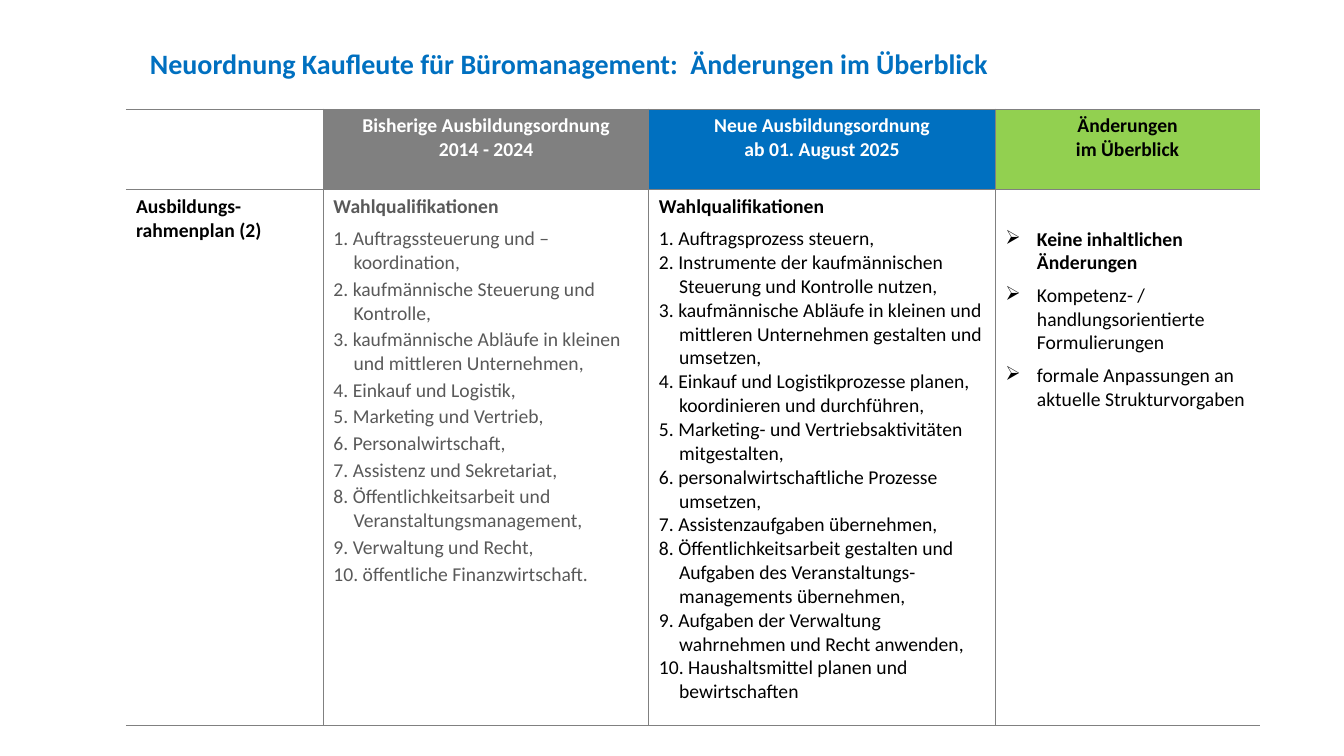
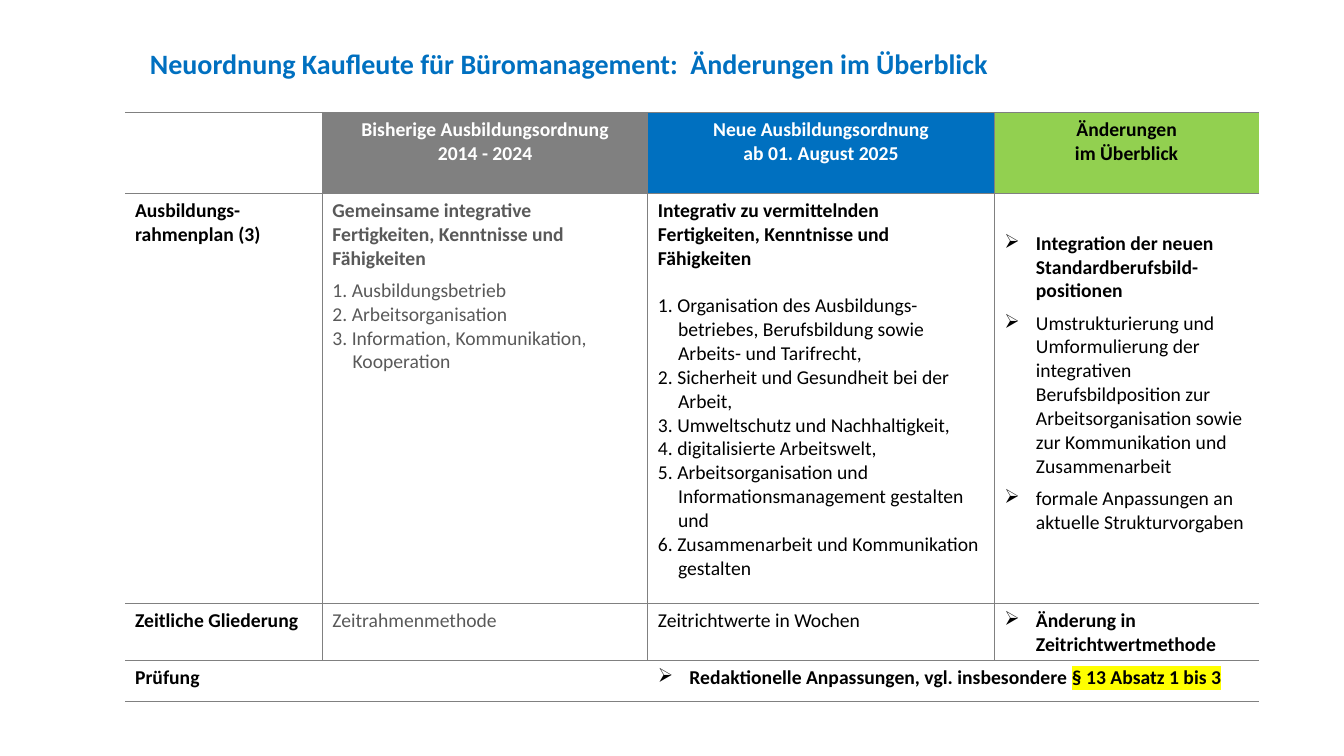
import pptx
import pptx.dml.color
import pptx.enum.text
import pptx.oxml
import pptx.oxml.ns
import pptx.util

Pt = pptx.util.Pt
CENTER = pptx.enum.text.PP_ALIGN.CENTER
NS = pptx.oxml.ns.nsdecls("a")

COLORS = {
    "black": "000000",
    "white": "FFFFFF",
    "dark": "595959",
    "gray": "808080",
    "blue": "0070C0",
    "green": "92D050",
    "yellow": "FFFF00",
}

# Each style: paragraph values, font values, colour, hanging indent, bullet
def style(color="black", bold=False, after=0, hang=0, bullet=None, align=None, size=14):
    return {
        "para": {"space_after": Pt(after), "alignment": align},
        "font": {"size": Pt(size), "bold": bold, "name": "Calibri"},
        "color": color,
        "hang": hang,
        "bullet": bullet,
    }


STYLES = {
    "title": style("blue", True, size=20),
    "light": style("white", True, align=CENTER),
    "head": style("black", True, align=CENTER),
    "label": style(bold=True),
    "old top": style("dark", True, after=6),
    "old": style("dark", hang=14.4),
    "old wide": style("dark", after=2, hang=14.4),
    "new top": style(bold=True, after=6),
    "new top wide": style(bold=True, after=17),
    "new": style(hang=14.4),
    "key": style(bold=True, after=6, hang=22.5, bullet="➢"),
    "point": style(after=6, hang=22.5, bullet="➢"),
    "last": style(bold=True, hang=22.5, bullet="➢"),
}


def write(frame, parts):
    """Fill a text frame from (style, text) pairs; text between bars is highlighted."""
    for i, (name, text) in enumerate(parts):
        look = STYLES[name]
        para = frame.paragraphs[0] if i == 0 else frame.add_paragraph()
        for key, value in look["para"].items():
            setattr(para, key, value)
        props = para._p.get_or_add_pPr()
        if look["hang"]:
            props.set("marL", str(Pt(look["hang"])))
            props.set("indent", str(-Pt(look["hang"])))
        if look["bullet"]:
            props.append(pptx.oxml.parse_xml(f'<a:buChar {NS} char="{look["bullet"]}"/>'))
        for j, piece in enumerate(text.split("|")):
            if not piece:
                continue
            run = para.add_run()
            run.text = piece
            for key, value in look["font"].items():
                setattr(run.font, key, value)
            run.font.color.rgb = pptx.dml.color.RGBColor.from_string(COLORS[look["color"]])
            if j % 2:
                fill = run._r.rPr.find(pptx.oxml.ns.qn("a:solidFill"))
                fill.addnext(pptx.oxml.parse_xml(
                    f'<a:highlight {NS}><a:srgbClr val="{COLORS["yellow"]}"/></a:highlight>'))


TITLE = "Neuordnung Kaufleute für Büromanagement:  Änderungen im Überblick"
WIDTHS = [141, 232.5, 247.5, 189]
FILLS = [None, "gray", "blue", "green"]
HEADS = [
    [],
    [("light", "Bisherige Ausbildungsordnung"), ("light", "2014 - 2024")],
    [("light", "Neue Ausbildungsordnung"), ("light", "ab 01. August 2025")],
    [("head", "Änderungen"), ("head", "im Überblick")],
]
FORMAL = ("point", "formale Anpassungen an aktuelle Strukturvorgaben")

PAGES = [
    {
        "left": 90, "top": 78, "heights": [57.5, 383],
        "rows": [[
            [("label", "Ausbildungs-rahmenplan (2)")],
            [
                ("old top", "Wahlqualifikationen"),
                ("old wide", "1. Auftragssteuerung und –koordination,"),
                ("old wide", "2. kaufmännische Steuerung und Kontrolle,"),
                ("old wide", "3. kaufmännische Abläufe in kleinen und mittleren Unternehmen,"),
                ("old wide", "4. Einkauf und Logistik,"),
                ("old wide", "5. Marketing und Vertrieb,"),
                ("old wide", "6. Personalwirtschaft,"),
                ("old wide", "7. Assistenz und Sekretariat,"),
                ("old wide", "8. Öffentlichkeitsarbeit und Veranstaltungsmanagement,"),
                ("old wide", "9. Verwaltung und Recht,"),
                ("old wide", "10. öffentliche Finanzwirtschaft."),
            ],
            [
                ("new top", "Wahlqualifikationen"),
                ("new", "1. Auftragsprozess steuern,"),
                ("new", "2. Instrumente der kaufmännischen Steuerung und Kontrolle nutzen,"),
                ("new", "3. kaufmännische Abläufe in kleinen und mittleren Unternehmen "
                        "gestalten und umsetzen,"),
                ("new", "4. Einkauf und Logistikprozesse planen, koordinieren und durchführen,"),
                ("new", "5. Marketing- und Vertriebsaktivitäten mitgestalten,"),
                ("new", "6. personalwirtschaftliche Prozesse umsetzen,"),
                ("new", "7. Assistenzaufgaben übernehmen,"),
                ("new", "8. Öffentlichkeitsarbeit gestalten und Aufgaben des "
                        "Veranstaltungs-managements übernehmen,"),
                ("new", "9. Aufgaben der Verwaltung wahrnehmen und Recht anwenden,"),
                ("new", "10. Haushaltsmittel planen und bewirtschaften"),
            ],
            [
                ("key", "Keine inhaltlichen Änderungen"),
                ("point", "Kompetenz- / handlungsorientierte Formulierungen"),
                FORMAL,
            ],
        ]],
    },
    {
        "left": 89.3, "top": 80.4, "heights": [58, 292.8, 40.7, 29.3],
        "rows": [
            [
                [("label", "Ausbildungs-rahmenplan (3)")],
                [
                    ("old top", "Gemeinsame integrative Fertigkeiten, Kenntnisse und Fähigkeiten"),
                    ("old", "1. Ausbildungsbetrieb"),
                    ("old", "2. Arbeitsorganisation"),
                    ("old", "3. Information, Kommunikation, Kooperation"),
                ],
                [
                    ("new top wide", "Integrativ zu vermittelnden Fertigkeiten, "
                                     "Kenntnisse und Fähigkeiten"),
                    ("new", "1. Organisation des Ausbildungs-betriebes, Berufsbildung "
                            "sowie Arbeits- und Tarifrecht,"),
                    ("new", "2. Sicherheit und Gesundheit bei der Arbeit,"),
                    ("new", "3. Umweltschutz und Nachhaltigkeit,"),
                    ("new", "4. digitalisierte Arbeitswelt,"),
                    ("new", "5. Arbeitsorganisation und Informationsmanagement gestalten und"),
                    ("new", "6. Zusammenarbeit und Kommunikation gestalten"),
                ],
                [
                    ("key", "Integration der neuen Standardberufsbild-positionen"),
                    ("point", "Umstrukturierung und Umformulierung der integrativen "
                              "Berufsbildposition zur Arbeitsorganisation sowie zur "
                              "Kommunikation und Zusammenarbeit"),
                    FORMAL,
                ],
            ],
            [
                [("label", "Zeitliche Gliederung")],
                [("old", "Zeitrahmenmethode")],
                [("new", "Zeitrichtwerte in Wochen")],
                [("last", "Änderung in Zeitrichtwertmethode")],
            ],
            [
                [("label", "Prüfung")],
                [],
                [("last", "Redaktionelle Anpassungen, vgl. insbesondere |§ 13 Absatz 1 bis 3|")],
            ],
        ],
    },
]

deck = pptx.Presentation()
deck.slide_width, deck.slide_height = Pt(960), Pt(540)

for page in PAGES:
    slide = deck.slides.add_slide(deck.slide_layouts[6])
    rows = [HEADS] + page["rows"]
    table = slide.shapes.add_table(
        len(rows), len(WIDTHS), Pt(page["left"]), Pt(page["top"]),
        Pt(sum(WIDTHS)), Pt(sum(page["heights"]))).table
    table.first_row = table.horz_banding = False
    for col, width in zip(table.columns, WIDTHS):
        col.width = Pt(width)
    for row, height in zip(table.rows, page["heights"]):
        row.height = Pt(height)

    for r, row in enumerate(rows):
        merged = len(row) < len(WIDTHS)
        if merged:
            table.cell(r, 2).merge(table.cell(r, 3))
        for c in range(len(WIDTHS)):
            cell = table.cell(r, c)
            props = cell._tc.get_or_add_tcPr()
            shown = {"L": c > 0 and not merged, "R": c < 3 and not merged, "T": True, "B": True}
            for side, drawn in shown.items():
                paint = (f'<a:solidFill><a:srgbClr val="{COLORS["gray"]}"/></a:solidFill>'
                         if drawn else "<a:noFill/>")
                props.append(pptx.oxml.parse_xml(
                    f'<a:ln{side} {NS} w="{Pt(1)}">{paint}</a:ln{side}>'))
            if r == 0 and FILLS[c]:
                cell.fill.solid()
                cell.fill.fore_color.rgb = pptx.dml.color.RGBColor.from_string(COLORS[FILLS[c]])
            else:
                cell.fill.background()
            if c < len(row):
                write(cell.text_frame, row[c])
    table.cell(1, 3).margin_top = Pt(27)

    box = slide.shapes.add_textbox(Pt(100), Pt(30), Pt(797), Pt(32))
    box.text_frame.word_wrap = True
    write(box.text_frame, [("title", TITLE)])

deck.save("out.pptx")
